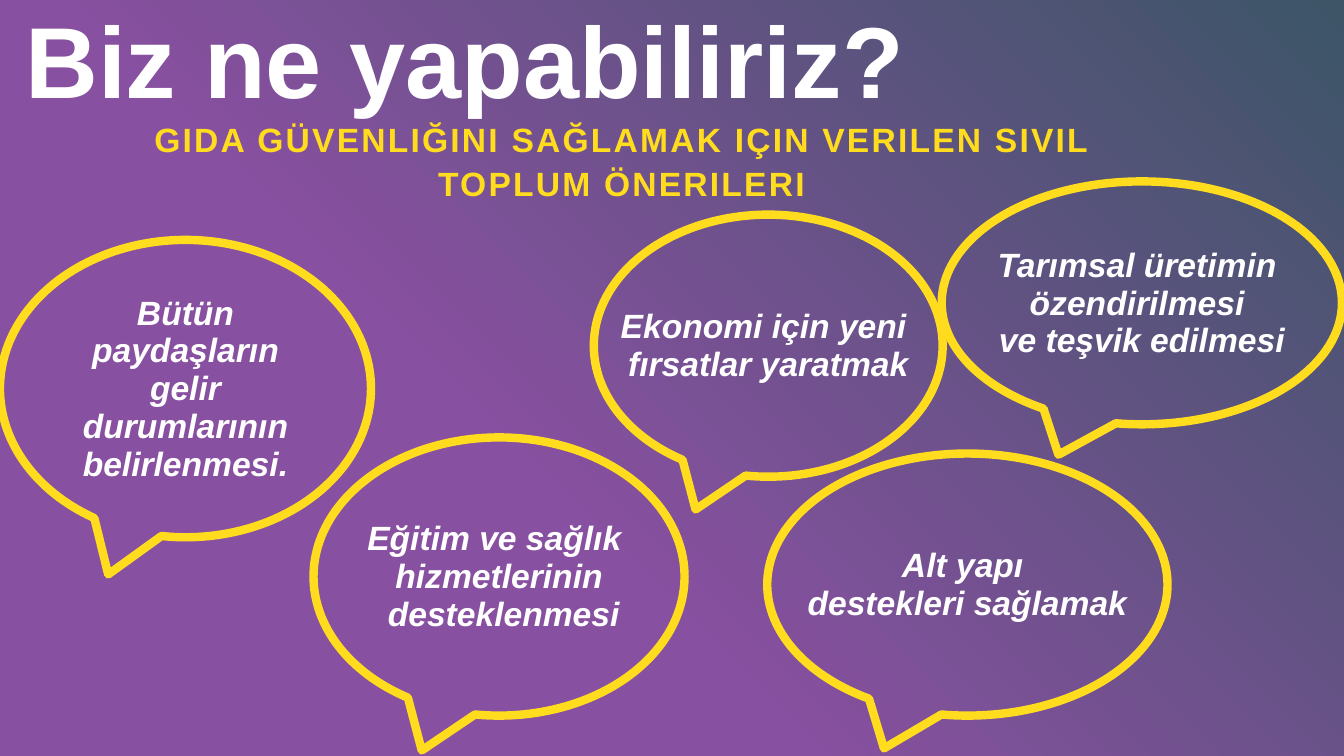
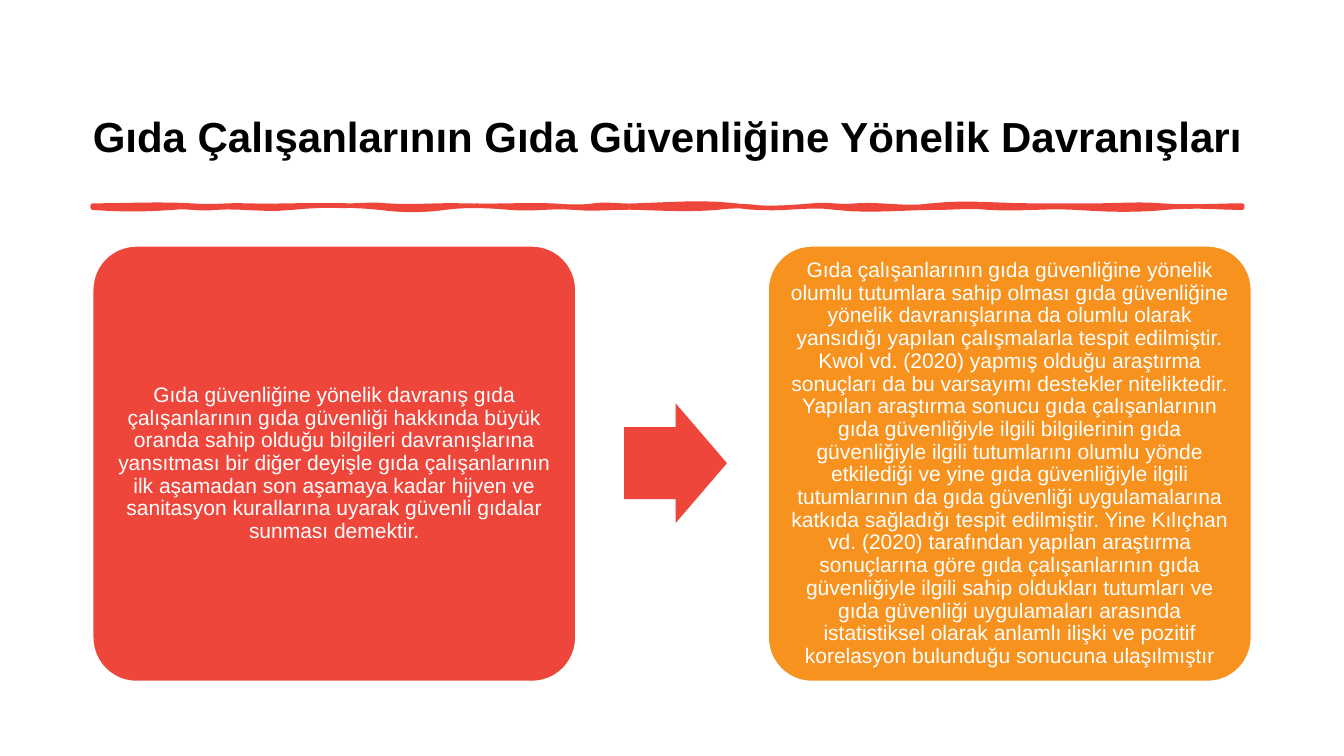
from typing import NamedTuple

from lxml.etree import SubElement
from pptx import Presentation
from pptx.dml.color import RGBColor
from pptx.enum.shapes import MSO_SHAPE as Shape
from pptx.enum.text import MSO_ANCHOR as Anchor, MSO_AUTO_SIZE as AutoSize, PP_ALIGN as Align
from pptx.oxml.ns import qn
from pptx.util import Emu, Pt

EMU_PER_PX = 9144
FONT = "Arial"
TITLE_LEADING = Pt(67.5)
WAVE_STEPS = 6
COLORS = {
    "purple": "8850A0",
    "teal": "3D5567",
    "yellow": "FFDC1E",
    "red": "EF463B",
    "orange": "F7921E",
    "white": "FFFFFF",
    "black": "000000",
}


class Box(NamedTuple):
    x: int
    y: int
    w: int
    h: int


class Bubble(NamedTuple):
    box: Box
    text: str
    wrap: bool = False


class Card(NamedTuple):
    x: int
    color: str
    sentences: list[str]


class Wave(NamedTuple):
    end: int
    bend_in: int
    bend_out: int


BUBBLES = [
    Bubble(Box(0, 238, 368, 295), "Bütün paydaşların gelir durumlarının belirlenmesi.", True),
    Bubble(Box(311, 434, 368, 276), "Eğitim ve sağlık \nhizmetlerinin\n desteklenmesi"),
    Bubble(Box(589, 213, 346, 260), "Ekonomi için yeni \nfırsatlar yaratmak"),
    Bubble(Box(761, 450, 397, 260), "Alt yapı \ndestekleri sağlamak"),
    Bubble(Box(934, 180, 397, 241), "Tarımsal üretimin \nözendirilmesi \nve teşvik edilmesi"),
]

CARDS = [
    Card(92, "red", [
        "Gıda güvenliğine yönelik davranış gıda çalışanlarının gıda güvenliği hakkında büyük "
        "oranda sahip olduğu bilgileri davranışlarına yansıtması bir diğer deyişle gıda "
        "çalışanlarının ilk aşamadan son aşamaya kadar hijven ve sanitasyon kurallarına uyarak "
        "güvenli gıdalar sunması demektir.",
    ]),
    Card(762, "orange", [
        "Gıda çalışanlarının gıda güvenliğine yönelik olumlu tutumlara sahip olması gıda "
        "güvenliğine yönelik davranışlarına da olumlu olarak yansıdığı yapılan çalışmalarla "
        "tespit edilmiştir.",
        "Kwol vd. (2020) yapmış olduğu araştırma sonuçları da bu varsayımı destekler "
        "niteliktedir.",
        "Yapılan araştırma sonucu gıda çalışanlarının gıda güvenliğiyle ilgili bilgilerinin "
        "gıda güvenliğiyle ilgili tutumlarını olumlu yönde etkilediği ve yine gıda "
        "güvenliğiyle ilgili tutumlarının da gıda güvenliği uygulamalarına katkıda sağladığı "
        "tespit edilmiştir.",
        "Yine Kılıçhan vd. (2020) tarafından yapılan araştırma sonuçlarına göre gıda "
        "çalışanlarının gıda güvenliğiyle ilgili sahip oldukları tutumları ve gıda güvenliği "
        "uygulamaları arasında istatistiksel olarak anlamlı ilişki ve pozitif korelasyon "
        "bulunduğu sonucuna ulaşılmıştır",
    ]),
]

RULE_LEFT, RULE_TOP, RULE_BOTTOM, RULE_RIGHT = 92, 204, 206, 1232
TOP_WAVES = [
    Wave(190, 0, -2), Wave(244, 2, -1), Wave(331, 1, -1), Wave(384, 1, -2),
    Wave(460, 2, -1), Wave(548, 1, -1), Wave(589, 1, 2), Wave(631, -2, 1),
    Wave(730, -1, -4), Wave(806, 4, 2), Wave(848, -2, 2), Wave(924, -2, 4),
    Wave(1023, -4, 0), Wave(1087, 0, 0), Wave(1152, 0, -2), Wave(RULE_RIGHT, 2, 0),
]
BOTTOM_WAVES = [
    Wave(1156, 0, -3), Wave(1068, 3, 2), Wave(981, -2, 2), Wave(928, -2, 0),
    Wave(829, 0, 4), Wave(753, -4, 2), Wave(711, -2, -2), Wave(635, 2, 1),
    Wave(570, -1, 2), Wave(506, -2, 2), Wave(441, -2, -3), Wave(377, 3, 3),
    Wave(289, -3, -3), Wave(213, 3, -2), Wave(171, 2, -2), Wave(RULE_LEFT, 2, 2),
]


def px(n: float) -> Emu:
    return Emu(round(n * EMU_PER_PX))


def rgb(name: str) -> RGBColor:
    return RGBColor.from_string(COLORS[name])


def write(tf, text: str, *, size: float, color: str = "white", bold: bool = False,
          italic: bool = False, align=Align.CENTER, anchor=Anchor.MIDDLE,
          leading=None, inset: int = 0, wrap: bool = True, tracking: int = 0) -> None:
    tf.auto_size = AutoSize.NONE
    tf.word_wrap = wrap
    tf.vertical_anchor = anchor
    tf.margin_left = tf.margin_right = tf.margin_top = tf.margin_bottom = px(inset)
    for i, line in enumerate(text.split("\n")):
        p = tf.add_paragraph() if i else tf.paragraphs[0]
        p.alignment = align
        p.line_spacing = leading
        p.space_before = Pt(0)
        r = p.add_run()
        r.text = line
        f = r.font
        f.name, f.size, f.bold, f.italic = FONT, Pt(size), bold, italic
        f.color.rgb = rgb(color)
        if tracking:
            r._r.get_or_add_rPr().set("spc", str(tracking))


def paint(sp, fill: str = "", line: str = "", width: float = 1) -> None:
    sp.shadow.inherit = False
    if fill:
        sp.fill.solid()
        sp.fill.fore_color.rgb = rgb(fill)
    else:
        sp.fill.background()
    if line:
        sp.line.color.rgb = rgb(line)
        sp.line.width = Pt(width)
    else:
        sp.line.fill.background()


def add_shape(s, kind, box: Box, **style):
    sp = s.shapes.add_shape(kind, *map(px, box))
    paint(sp, **style)
    return sp


def add_slide(prs, title: str, box: Box, **style):
    s = prs.slides.add_slide(prs.slide_layouts[5])
    sp = s.shapes.title
    sp.left, sp.top, sp.width, sp.height = map(px, box)
    write(sp.text_frame, title, bold=True, align=Align.LEFT, leading=TITLE_LEADING, **style)
    return s


def set_corner_gradient(s) -> None:
    fill = s.background.fill
    fill.gradient()
    for stop, color, position in zip(fill.gradient_stops, ("purple", "teal"), (0.38, 1)):
        stop.color.rgb = rgb(color)
        stop.position = position
    grad = s.element.xpath(".//p:bg//a:gradFill")[0]
    for lin in grad.findall(qn("a:lin")):
        grad.remove(lin)
    circle = SubElement(grad, qn("a:path"), {"path": "circle"})
    SubElement(circle, qn("a:fillToRect"), {"t": "100000", "r": "100000"})


def wave_points(start: int, base: int, waves: list[Wave]) -> list[tuple[Emu, Emu]]:
    points = []
    for wave in waves:
        for i in range(1, WAVE_STEPS + 1):
            t = i / WAVE_STEPS
            bend = 3 * t * (1 - t) * ((1 - t) * wave.bend_in + t * wave.bend_out)
            points.append((px(start + t * (wave.end - start)), px(base + bend)))
        start = wave.end
    return points


def add_brush_rule(s) -> None:
    fb = s.shapes.build_freeform(px(RULE_LEFT), px(RULE_TOP))
    fb.add_line_segments(wave_points(RULE_LEFT, RULE_TOP, TOP_WAVES), close=False)
    fb.add_line_segments([(px(RULE_RIGHT), px(RULE_BOTTOM))], close=False)
    fb.add_line_segments(wave_points(RULE_RIGHT, RULE_BOTTOM, BOTTOM_WAVES), close=True)
    paint(fb.convert_to_shape(), fill="red", line="red", width=3.25)


def add_bubble(s, bubble: Bubble) -> None:
    sp = add_shape(s, Shape.OVAL_CALLOUT, bubble.box, line="yellow", width=6)
    write(sp.text_frame, bubble.text, size=24, bold=True, italic=True,
          leading=Pt(27), wrap=bubble.wrap)


def add_card(s, card: Card) -> None:
    sp = add_shape(s, Shape.ROUNDED_RECTANGLE, Box(card.x, 244, 479, 432),
                   fill=card.color, line="white")
    sp.adjustments[0] = 0.1
    write(sp.text_frame, " ".join(card.sentences), size=15, leading=0.9, inset=6)


def build_suggestions(prs) -> None:
    s = add_slide(prs, "Biz ne yapabiliriz?", Box(25, 24, 1233, 214),
                  size=72, anchor=Anchor.TOP)
    set_corner_gradient(s)
    sp = s.shapes.add_textbox(*map(px, Box(0, 114, 1233, 154)))
    write(sp.text_frame, "GIDA GÜVENLIĞINI SAĞLAMAK IÇIN VERILEN SIVIL\nTOPLUM ÖNERILERI",
          size=24, color="yellow", bold=True, anchor=Anchor.TOP, leading=Pt(31.5), tracking=160)
    for bubble in BUBBLES:
        add_bubble(s, bubble)


def build_behaviours(prs) -> None:
    s = add_slide(prs, "Gıda Çalışanlarının Gıda Güvenliğine Yönelik Davranışları",
                  Box(92, 40, 1150, 145), size=30, color="black")
    add_brush_rule(s)
    for card in CARDS:
        add_card(s, card)
    arrow = add_shape(s, Shape.RIGHT_ARROW, Box(619, 400, 102, 119), fill="red")
    arrow.adjustments[0] = 0.6


def main() -> None:
    prs = Presentation()
    prs.slide_width, prs.slide_height = px(1333), px(750)
    build_suggestions(prs)
    build_behaviours(prs)
    prs.save("out.pptx")


if __name__ == "__main__":
    main()
